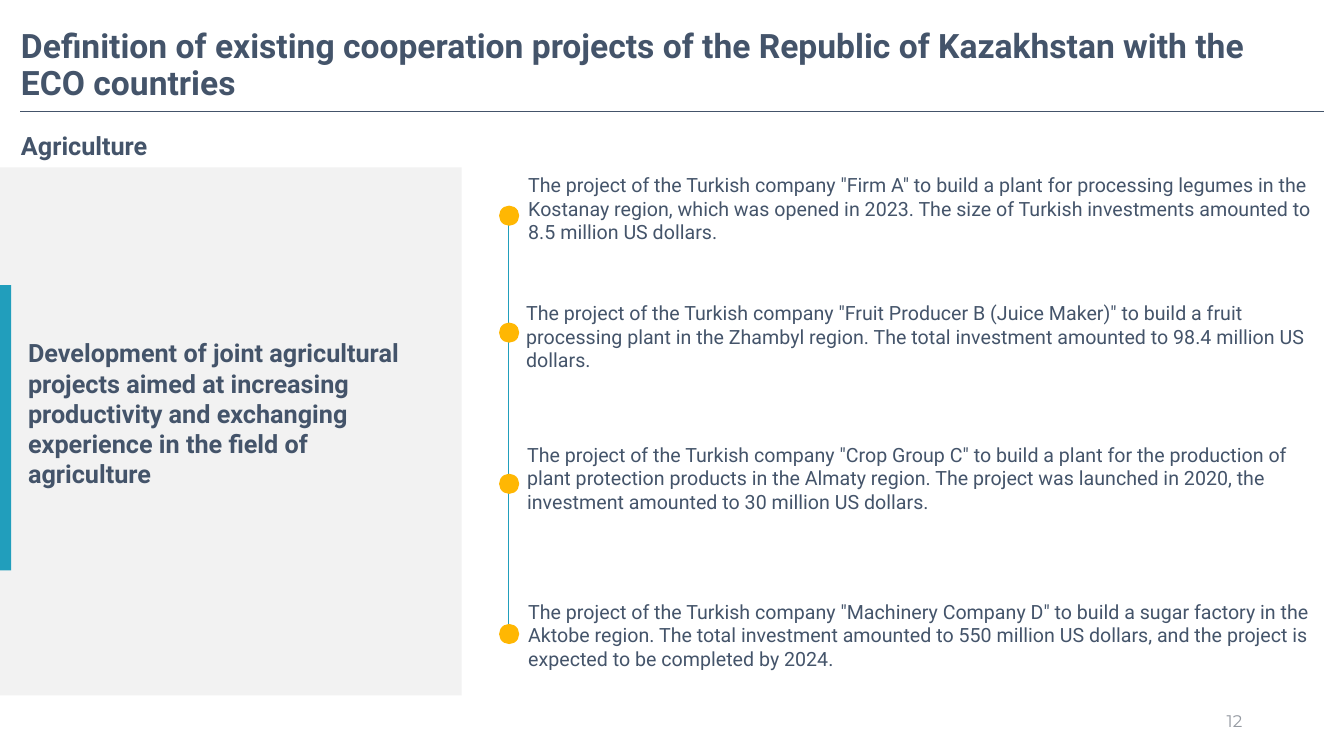
from dataclasses import dataclass

from lxml import etree
from pptx import Presentation
from pptx import util as u
from pptx.dml.color import RGBColor
from pptx.enum import shapes, text
from pptx.oxml import ns

SLATE = RGBColor(0x44, 0x54, 0x6A)
TEAL = RGBColor(0x21, 0x9E, 0xBC)
AMBER = RGBColor(0xFF, 0xB7, 0x03)
PANEL_GREY = RGBColor(0xF2, 0xF2, 0xF2)
NUMBER_GREY = RGBColor(0x94, 0x99, 0xA1)

DOT_LEFT, DOT_SIZE = 4.95, 0.2


@dataclass
class Box:
    left: float
    top: float
    width: float
    height: float

    def lengths(self) -> list[u.Length]:
        return [u.Inches(v) for v in (self.left, self.top, self.width, self.height)]


@dataclass
class Label:
    box: Box
    words: str
    size: int
    bold: bool = False
    font: str = "Roboto"
    color: RGBColor = SLATE
    anchor: text.MSO_ANCHOR = text.MSO_ANCHOR.TOP
    align: text.PP_ALIGN = text.PP_ALIGN.LEFT
    line_spacing: float = 1.0
    space_after: int = 0


@dataclass
class Project:
    dot_top: float
    box: Box
    words: str


PROJECTS = [
    Project(2.04, Box(5.14, 1.67, 8.08, 0.81),
            'The project of the Turkish company "Firm A" to build a plant for processing '
            "legumes in the Kostanay region, which was opened in 2023. The size of Turkish "
            "investments amounted to 8.5 million US dollars."),
    Project(3.2, Box(5.12, 2.94, 8.19, 0.81),
            'The project of the Turkish company "Fruit Producer B (Juice Maker)" to build '
            "a fruit processing plant in the Zhambyl region. The total investment amounted to "
            "98.4 million US dollars."),
    Project(4.7, Box(5.13, 4.34, 8.19, 0.81),
            'The project of the Turkish company "Crop Group C" to build a plant for the '
            "production of plant protection products in the Almaty region. The project was "
            "launched in 2020, the investment amounted to 30 million US dollars."),
    Project(6.19, Box(5.14, 5.9, 8.19, 0.81),
            'The project of the Turkish company "Machinery Company D" to build a sugar factory '
            "in the Aktobe region. The total investment amounted to 550 million US dollars, and "
            "the project is expected to be completed by 2024."),
]

LABELS = [
    Label(Box(0.11, 0.31, 12.92, 0.69),
          "Definition of existing cooperation projects of the Republic of Kazakhstan "
          "with the ECO countries",
          24, bold=True, anchor=text.MSO_ANCHOR.MIDDLE, line_spacing=0.9),
    Label(Box(0.11, 1.2, 12.75, 0.43), "Agriculture", 18, bold=True,
          align=text.PP_ALIGN.JUSTIFY, line_spacing=1.15, space_after=10),
    Label(Box(0.18, 3.3, 4.22, 1.62),
          "Development of joint agricultural projects aimed at increasing productivity "
          "and exchanging experience in the field of agriculture",
          18, bold=True),
    Label(Box(9.42, 6.95, 3, 0.4), "12", 12, font="Montserrat", color=NUMBER_GREY,
          anchor=text.MSO_ANCHOR.MIDDLE, align=text.PP_ALIGN.RIGHT),
]


def add_filled(s, kind: shapes.MSO_SHAPE, box: Box, color: RGBColor) -> None:
    sp = s.shapes.add_shape(kind, *box.lengths())
    sp.shadow.inherit = False
    sp.fill.solid()
    sp.fill.fore_color.rgb = color
    sp.line.fill.background()


def add_line(s, x1: float, y1: float, x2: float, y2: float, color: RGBColor) -> None:
    ends = [u.Inches(v) for v in (x1, y1, x2, y2)]
    line = s.shapes.add_connector(shapes.MSO_CONNECTOR.STRAIGHT, *ends)
    line.line.color.rgb = color
    line.line.width = u.Pt(0.5)
    etree.SubElement(line._element.spPr, ns.qn("a:effectLst"))


def add_label(s, label: Label) -> None:
    tf = s.shapes.add_textbox(*label.box.lengths()).text_frame
    tf.word_wrap = True
    tf.vertical_anchor = label.anchor
    p = tf.paragraphs[0]
    p.alignment = label.align
    p.line_spacing = label.line_spacing
    p.space_after = u.Pt(label.space_after)
    r = p.add_run()
    r.text = label.words
    r.font.name = label.font
    r.font.size = u.Pt(label.size)
    r.font.bold = label.bold
    r.font.color.rgb = label.color


def main() -> None:
    prs = Presentation()
    prs.slide_width, prs.slide_height = u.Inches(13.33), u.Inches(7.5)
    s = prs.slides.add_slide(prs.slide_layouts[6])

    # Left panel with accent bar
    add_filled(s, shapes.MSO_SHAPE.RECTANGLE, Box(0, 1.66, 4.58, 5.24), PANEL_GREY)
    add_filled(s, shapes.MSO_SHAPE.RECTANGLE, Box(0, 2.83, 0.11, 2.83), TEAL)

    # Title rule and timeline
    add_line(s, 0.2, 1.1, 13.13, 1.1, SLATE)
    add_line(s, 5.04, 2.22, 5.04, 6.35, TEAL)

    # Headings and page number
    for label in LABELS:
        add_label(s, label)

    # Projects along the timeline
    for project in PROJECTS:
        dot = Box(DOT_LEFT, project.dot_top, DOT_SIZE, DOT_SIZE)
        add_filled(s, shapes.MSO_SHAPE.OVAL, dot, AMBER)
        add_label(s, Label(project.box, project.words, 14))

    prs.save("out.pptx")


if __name__ == "__main__":
    main()
